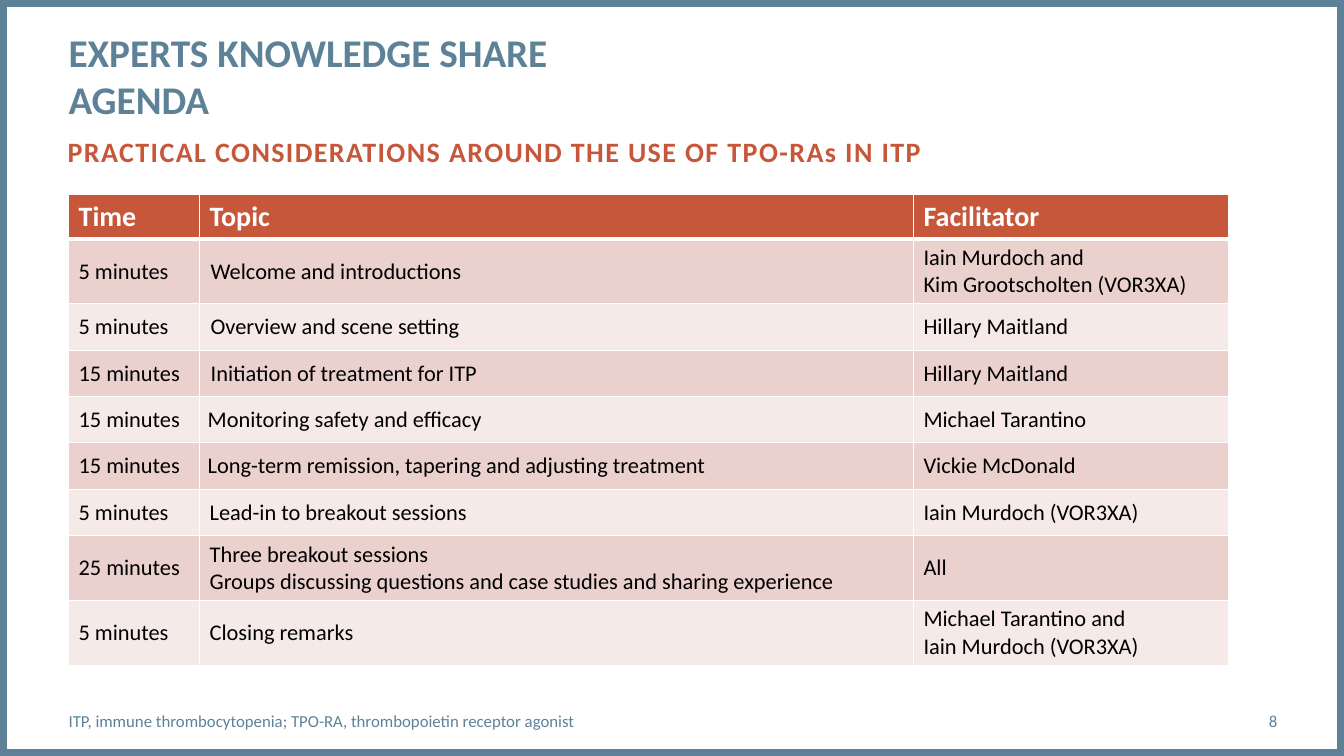
import copy
import lxml.etree
import pptx
import pptx.dml.color
import pptx.enum.shapes
import pptx.enum.text
import pptx.oxml.ns
import pptx.util

Inches = pptx.util.Inches
Pt = pptx.util.Pt
RGBColor = pptx.dml.color.RGBColor
Align = pptx.enum.text.PP_ALIGN
Anchor = pptx.enum.text.MSO_ANCHOR
qn = pptx.oxml.ns.qn

SLATE = RGBColor(0x5D, 0x82, 0x98)
RUST = RGBColor(0xC6, 0x57, 0x3B)
ROSE = RGBColor(0xEA, 0xD1, 0xCE)
BLUSH = RGBColor(0xF5, 0xEA, 0xE8)
WHITE = RGBColor(0xFF, 0xFF, 0xFF)
BLACK = RGBColor(0x00, 0x00, 0x00)

AGENDA = [
    ("Time", "Topic", "Facilitator"),
    ("5 minutes", "Welcome and introductions", "Iain Murdoch and\nKim Grootscholten (VOR3XA)"),
    ("5 minutes", "Overview and scene setting", "Hillary Maitland"),
    ("15 minutes", "Initiation of treatment for ITP", "Hillary Maitland"),
    ("15 minutes", "Monitoring safety and efficacy", "Michael Tarantino"),
    ("15 minutes", "Long-term remission, tapering and adjusting treatment", "Vickie McDonald"),
    ("5 minutes", "Lead-in to breakout sessions", "Iain Murdoch (VOR3XA)"),
    ("25 minutes", "Three breakout sessions\nGroups discussing questions and case studies and sharing experience", "All"),
    ("5 minutes", "Closing remarks", "Michael Tarantino and\nIain Murdoch (VOR3XA)"),
]
TOPIC_MARGINS = [0.1, 0.11, 0.11, 0.11, 0.08, 0.08, 0.1, 0.1, 0.1]


class AgendaSlide:
    """Holds the style and the slide, and draws each kind of element."""

    font = "Calibri"

    def __init__(self, prs):
        self.prs = prs
        self.s = prs.slides.add_slide(prs.slide_layouts[6])

    def fill_paragraph(self, p, text, size, color, bold=False, spacing=None):
        p.text = text
        style = {"name": self.font, "size": Pt(size), "bold": bold}
        for r in p.runs:
            for key, value in style.items():
                setattr(r.font, key, value)
            r.font.color.rgb = color
            if spacing:
                r._r.get_or_add_rPr().set("spc", str(spacing * 100))
        for br in p._p.findall(qn("a:br")):
            br.insert(0, copy.deepcopy(p.runs[0]._r.rPr))

    def frame(self, color, width):
        sp = self.s.shapes.add_shape(pptx.enum.shapes.MSO_SHAPE.RECTANGLE, 0, 0,
                                     self.prs.slide_width, self.prs.slide_height)
        sp.shadow.inherit = False
        sp.fill.background()
        sp.line.color.rgb = color
        sp.line.width = Pt(width)

    def text(self, box, text, size, color, bold=False, spacing=None,
             anchor=Anchor.TOP, align=Align.LEFT):
        tf = self.s.shapes.add_textbox(*map(Inches, box)).text_frame
        layout = {"word_wrap": True, "vertical_anchor": anchor, "margin_left": 0,
                  "margin_top": 0, "margin_right": 0, "margin_bottom": 0}
        for key, value in layout.items():
            setattr(tf, key, value)
        p = tf.paragraphs[0]
        p.alignment = align
        self.fill_paragraph(p, text, size, color, bold, spacing)

    def borders(self, cell, widths):
        tcPr = cell._tc.get_or_add_tcPr()
        for i, (side, width) in enumerate(widths.items()):
            ln = lxml.etree.Element(qn("a:ln" + side), w=str(Pt(width)))
            fill = lxml.etree.SubElement(ln, qn("a:solidFill"))
            lxml.etree.SubElement(fill, qn("a:srgbClr"), val=str(WHITE))
            tcPr.insert(i, ln)

    def table(self, left, top, widths, rows, topic_margins):
        heights = [0.44] + [0.64 if any("\n" in t for t in row) else 0.46 for row in rows[1:]]
        tbl = self.s.shapes.add_table(len(rows), len(widths), Inches(left), Inches(top),
                                      Inches(sum(widths)), Inches(sum(heights))).table
        tbl.horz_banding = False
        for column, width in zip(tbl.columns, widths):
            column.width = Inches(width)
        for i, row in enumerate(rows):
            tbl.rows[i].height = Inches(heights[i])
            header = i == 0
            for j, text in enumerate(row):
                cell = tbl.cell(i, j)
                cell.margin_left = Inches(topic_margins[i] if j == 1 else 0.1)
                cell.vertical_anchor = Anchor.TOP if header else Anchor.MIDDLE
                cell.fill.solid()
                cell.fill.fore_color.rgb = RUST if header else ROSE if i % 2 else BLUSH
                self.borders(cell, {"L": 1, "R": 1, "T": 3 if i == 1 else 1, "B": 3 if header else 1})
                self.fill_paragraph(cell.text_frame.paragraphs[0], text, 20 if header else 16,
                                    WHITE if header else BLACK, header)


def main():
    prs = pptx.Presentation()
    prs.slide_width = Inches(13.33)
    prs.slide_height = Inches(7.5)
    s = AgendaSlide(prs)
    s.frame(SLATE, 10)
    s.table(0.68, 1.93, [1.3, 7.08, 3.13], AGENDA, TOPIC_MARGINS)
    s.text((0.67, 1.33, 12, 0.5), "PRACTICAL CONSIDERATIONS AROUND THE USE OF TPO-RAs IN ITP",
           20, RUST, bold=True, spacing=1)
    s.text((0.68, 0.28, 9.56, 0.94), "EXPERTS KNOWLEDGE SHARE\nAGENDA", 28, SLATE, bold=True)
    s.text((0.68, 6.95, 8.88, 0.4), "ITP, immune thrombocytopenia; TPO-RA, thrombopoietin receptor agonist",
           12, SLATE, anchor=Anchor.MIDDLE)
    s.text((11.5, 6.95, 1.17, 0.4), "8", 12, SLATE, anchor=Anchor.MIDDLE, align=Align.RIGHT)
    prs.save("out.pptx")


if __name__ == "__main__":
    main()
